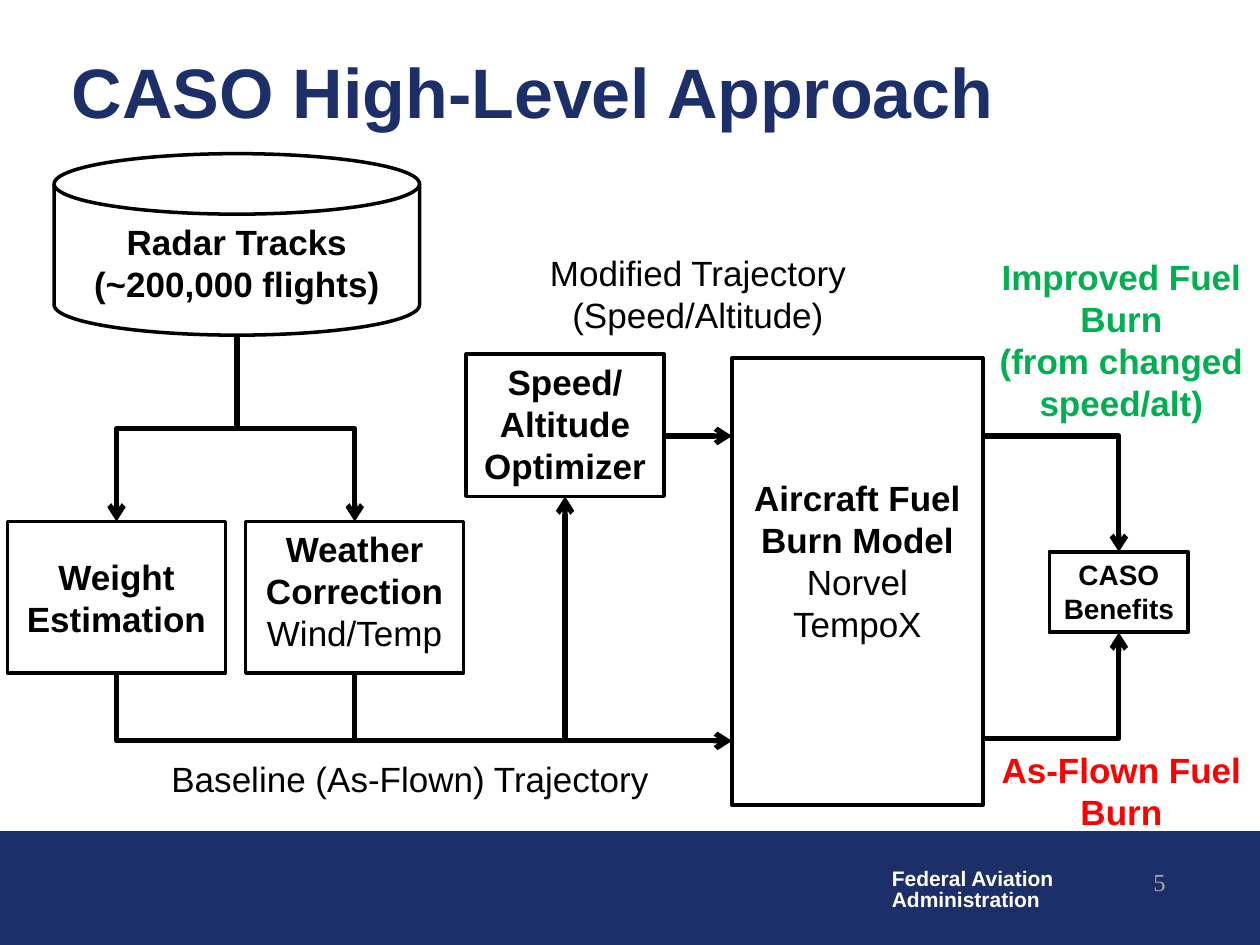
from lxml import etree
from pptx import Presentation
from pptx.dml.color import RGBColor
from pptx.enum import shapes, text
from pptx.oxml.ns import qn
from pptx.util import Inches, Pt

NAVY = RGBColor(0x1D, 0x2F, 0x68)
BLACK = RGBColor(0, 0, 0)
WHITE = RGBColor(255, 255, 255)
GREEN = RGBColor(0, 0xB0, 0x50)
RED = RGBColor(255, 0, 0)
GREY = RGBColor(0xA6, 0xA6, 0xA6)

SHAPE, ALIGN, ANCHOR = shapes.MSO_SHAPE, text.PP_ALIGN, text.MSO_ANCHOR
TOP, MIDDLE = ANCHOR.TOP, ANCHOR.MIDDLE

# Paragraphs are (text, bold); a newline is a line break.
# name: (preset, (left, top, width, height), paragraphs, size, anchor, line width, fill)
NODES = {
    "tracks": (SHAPE.FLOWCHART_MAGNETIC_DISK, (0.43, 1.22, 2.9, 1.44),
               [("Radar Tracks\n(~200,000 flights)", True)], 20, TOP, 2, None),
    "model": (SHAPE.RECTANGLE, (5.81, 2.84, 1.99, 3.55),
              [("Aircraft Fuel Burn Model", True), ("Norvel TempoX", False)],
              20, MIDDLE, 2, WHITE),
    "weight": (SHAPE.RECTANGLE, (0.06, 4.14, 1.73, 1.2),
               [("Weight\nEstimation", True)], 20, MIDDLE, 2, None),
    "weather": (SHAPE.RECTANGLE, (1.95, 4.14, 1.73, 1.2),
                [("Weather Correction", True), ("Wind/Temp", False)], 20, TOP, 2, None),
    "optimizer": (SHAPE.RECTANGLE, (3.7, 2.81, 1.57, 1.13),
                  [("Speed/\nAltitude Optimizer", True)], 20, TOP, 2, WHITE),
    "benefits": (SHAPE.RECTANGLE, (8.33, 4.38, 1.1, 0.64),
                 [("CASO Benefits", True)], 16, TOP, 2.25, WHITE),
}

# (left, top, width, height), paragraphs, size, colour, alignment
LABELS = [
    ((7.8, 5.89, 2.2, 0.77), [("As-Flown Fuel Burn", True)], 20, RED, ALIGN.CENTER),
    ((7.8, 1.98, 2.2, 1.45),
     [("Improved Fuel Burn", True), ("(from changed speed/alt)", True)],
     20, GREEN, ALIGN.CENTER),
    ((0.91, 5.96, 4.69, 0.44), [("Baseline (As-Flown) Trajectory", False)],
     20, BLACK, ALIGN.CENTER),
    ((3.99, 1.95, 3.1, 0.77), [("Modified Trajectory", False), ("(Speed/Altitude)", False)],
     20, BLACK, ALIGN.CENTER),
]

MODIFIED_Y = 3.46
BASELINE_Y = 5.88


def write(shape, paragraphs, size, color, align=ALIGN.CENTER, anchor=TOP,
          font="Arial", spacing=None):
    frame = shape.text_frame
    frame.word_wrap = True
    frame.vertical_anchor = anchor
    for i, (content, bold) in enumerate(paragraphs):
        paragraph = frame.paragraphs[0] if i == 0 else frame.add_paragraph()
        paragraph.alignment = align
        if spacing:
            paragraph.line_spacing = spacing
        for j, line in enumerate(content.split("\n")):
            if j:
                paragraph.add_line_break()
            run = paragraph.add_run()
            run.text = line
            run.font.name, run.font.size, run.font.bold = font, Pt(size), bold
            run.font.color.rgb = color


def add_label(slide, box, paragraphs, size, color, align, **style):
    label = slide.shapes.add_textbox(*map(Inches, box))
    write(label, paragraphs, size, color, align, **style)
    return label


def add_box(slide, preset, box, fill, line_color, line_width):
    shape = slide.shapes.add_shape(preset, *map(Inches, box))
    shape.shadow.inherit = False
    if fill is None:
        shape.fill.background()
    else:
        shape.fill.solid()
        shape.fill.fore_color.rgb = fill
    shape.line.color.rgb = line_color
    shape.line.width = Pt(line_width)
    return shape


def side(name, where):
    """Middle of one side of a node, in inches."""
    left, top, width, height = NODES[name][1]
    return {"top": (left + width / 2, top), "bottom": (left + width / 2, top + height),
            "right": (left + width, top + height / 2)}[where]


def add_line(slide, start, end, arrow=True, kind=shapes.MSO_CONNECTOR.STRAIGHT):
    line = slide.shapes.add_connector(kind, *map(Inches, start + end))
    line.line.color.rgb = BLACK
    line.line.width = Pt(3)
    if arrow:
        etree.SubElement(line.line._get_or_add_ln(), qn("a:tailEnd"), type="arrow")
    etree.SubElement(line._element.spPr, qn("a:effectLst"))
    return line


def add_elbow(slide, start, end, bends, vertical_first=False):
    """Arrow with one or two bends; a vertical start needs a quarter turn."""
    elbow = add_line(slide, start, end, kind=shapes.MSO_CONNECTOR.ELBOW)
    properties = elbow._element.spPr
    properties.find(qn("a:prstGeom")).set("prst", f"bentConnector{bends + 1}")
    if vertical_first:
        (x1, y1), (x2, y2) = start, end
        width, height = abs(y2 - y1), abs(x2 - x1)
        elbow.left = Inches((x1 + x2 - width) / 2)
        elbow.top = Inches((y1 + y2 - height) / 2)
        elbow.width, elbow.height = Inches(width), Inches(height)
        rightward = x2 > x1
        frame = properties.find(qn("a:xfrm"))
        frame.set("rot", str((270 if rightward else 90) * 60000))
        frame.set("flipH", "1" if rightward else "0")


def main():
    deck = Presentation()
    deck.slide_width, deck.slide_height = Inches(10), Inches(7.5)
    slide = deck.slides.add_slide(deck.slide_layouts[6])

    add_box(slide, SHAPE.RECTANGLE, (0, 6.6, 10, 0.9), NAVY, NAVY, 0.75)
    add_label(slide, (6.98, 6.85, 1.5, 0.44),
              [("Federal Aviation", True), ("Administration", True)],
              12, WHITE, ALIGN.LEFT, spacing=0.85)
    add_label(slide, (0.47, 0.38, 9.27, 0.67), [("CASO High-Level Approach", True)],
              40, NAVY, ALIGN.LEFT, anchor=MIDDLE)
    add_label(slide, (7.27, 6.83, 2.08, 0.5), [("5", False)],
              14, GREY, ALIGN.RIGHT, font="Times New Roman")

    nodes = {}
    for name, (preset, box, paragraphs, size, anchor, width, fill) in NODES.items():
        nodes[name] = add_box(slide, preset, box, fill, BLACK, width)
        write(nodes[name], paragraphs, size, BLACK, anchor=anchor)
    nodes["model"].text_frame.margin_bottom = Inches(0.38)
    for label in LABELS:
        add_label(slide, *label)

    for target in ("weight", "weather"):
        add_elbow(slide, side("tracks", "bottom"), side(target, "top"), 2, True)

    model_left = NODES["model"][1][0]
    model_right = side("model", "right")[0]
    add_elbow(slide, side("weight", "bottom"), (model_left, BASELINE_Y), 1, True)

    weather_x, weather_bottom = side("weather", "bottom")
    drop = add_line(slide, (weather_x, weather_bottom), (weather_x, BASELINE_Y), arrow=False)
    drop.begin_connect(nodes["weather"], 2)

    optimizer_x, optimizer_bottom = side("optimizer", "bottom")
    rise = add_line(slide, (optimizer_x, BASELINE_Y), (optimizer_x, optimizer_bottom))
    rise.end_connect(nodes["optimizer"], 2)

    add_line(slide, (side("optimizer", "right")[0], MODIFIED_Y), (model_left, MODIFIED_Y))
    add_elbow(slide, (model_right, MODIFIED_Y), side("benefits", "top"), 1)
    add_elbow(slide, (model_right, 5.86), side("benefits", "bottom"), 1)

    deck.save("out.pptx")


if __name__ == "__main__":
    main()
